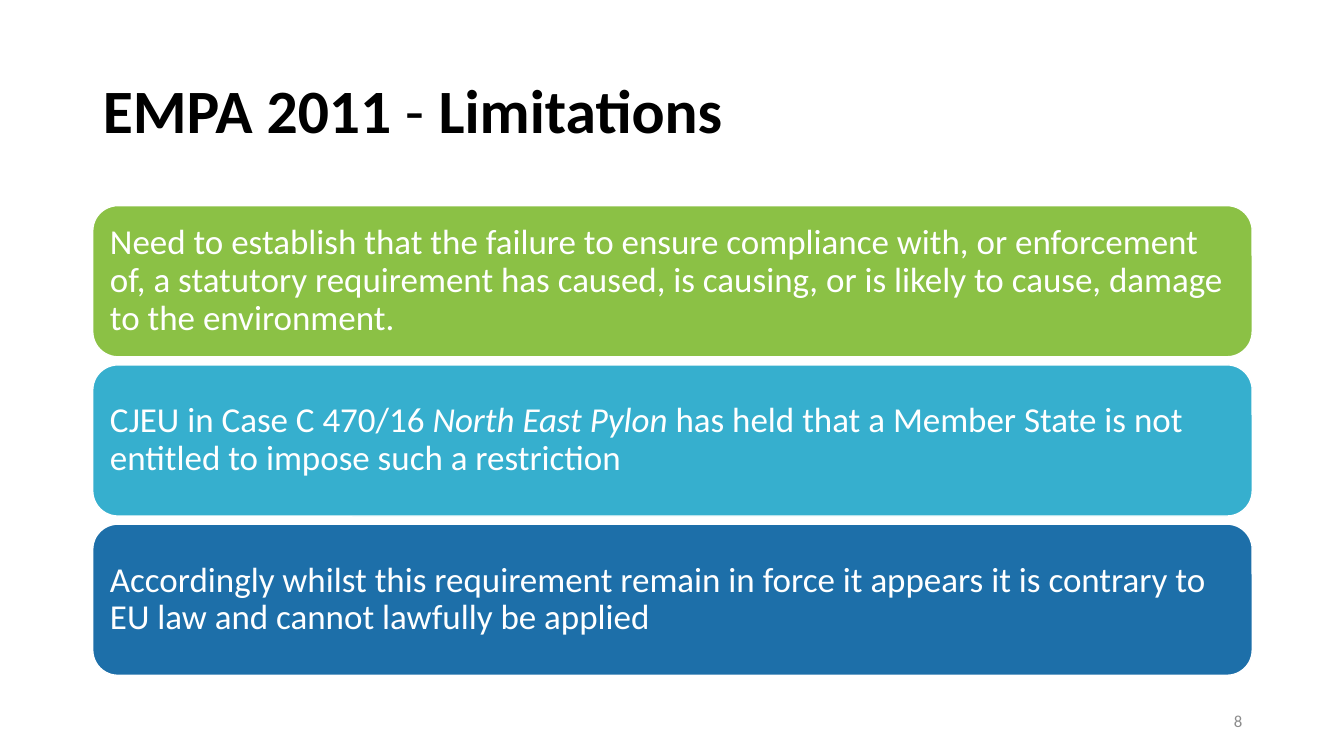
import pptx
import pptx.dml.color
import pptx.enum.shapes
import pptx.enum.text
import pptx.util

Inches = pptx.util.Inches
Align = pptx.enum.text.PP_ALIGN
Anchor = pptx.enum.text.MSO_ANCHOR

LEFT, WIDTH = 0.92, 11.5
CARD_TOP, CARD_HEIGHT, CARD_GAP = 2.04, 1.5, 0.08

TITLE = [("EMPA 2011 ", True, False), ("- ", False, False), ("Limitations", True, False)]
CARDS = [
    ("8BC145", [("Need to establish that the failure to ensure compliance with, or enforcement of, "
                 "a statutory requirement has caused, is causing, or is likely to cause, damage "
                 "to the environment.", False, False)]),
    ("36AFCE", [("CJEU in Case C 470/16 ", False, False),
                ("North East Pylon", False, True),
                (" has held that a Member State is not entitled to impose such a restriction",
                 False, False)]),
    ("1D6FA9", [("Accordingly whilst this requirement remain in force it appears it is contrary to "
                 "EU law and cannot lawfully be applied", False, False)]),
]


def colour(value):
    return pptx.dml.color.RGBColor.from_string(value)


class SlideBuilder:
    font_name = "Calibri"

    def __init__(self, page):
        self.page = page

    def add_text(self, box, spans, size, ink, align=Align.LEFT, spacing=0.9):
        frame = box.text_frame
        frame.word_wrap = True
        frame.auto_size = pptx.enum.text.MSO_AUTO_SIZE.NONE
        frame.vertical_anchor = Anchor.MIDDLE
        para = frame.paragraphs[0]
        para.alignment = align
        para.line_spacing = spacing
        para.font.name = self.font_name
        para.font.size = pptx.util.Pt(size)
        para.font.color.rgb = colour(ink)
        for text, bold, italic in spans:
            span = para.add_run()
            span.text = text
            span.font.bold = bold
            span.font.italic = italic

    def title(self, spans):
        box = self.page.shapes.title
        box.left, box.top = Inches(LEFT), Inches(0.4)
        box.width, box.height = Inches(WIDTH), Inches(1.45)
        self.add_text(box, spans, 44, "000000")

    def card(self, top, fill, spans):
        box = self.page.shapes.add_shape(
            pptx.enum.shapes.MSO_SHAPE.ROUNDED_RECTANGLE,
            Inches(LEFT), Inches(top), Inches(WIDTH), Inches(CARD_HEIGHT))
        box.shadow.inherit = False
        box.fill.solid()
        box.fill.fore_color.rgb = colour(fill)
        box.line.color.rgb = colour("FFFFFF")
        box.line.width = pptx.util.Pt(1)
        frame = box.text_frame
        frame.margin_left = frame.margin_right = Inches(0.1)
        frame.margin_top = frame.margin_bottom = Inches(0.1)
        self.add_text(box, spans, 25, "FFFFFF")

    def page_number(self, number):
        box = self.page.shapes.add_textbox(Inches(9.42), Inches(6.95), Inches(3), Inches(0.4))
        self.add_text(box, [(number, False, False)], 12, "8C8C8C", Align.RIGHT, 1.0)


def main():
    deck = pptx.Presentation()
    deck.slide_width, deck.slide_height = Inches(13.33), Inches(7.5)
    builder = SlideBuilder(deck.slides.add_slide(deck.slide_layouts[5]))
    builder.title(TITLE)
    for index, (fill, spans) in enumerate(CARDS):
        builder.card(CARD_TOP + index * (CARD_HEIGHT + CARD_GAP), fill, spans)
    builder.page_number("8")
    deck.save("out.pptx")


if __name__ == "__main__":
    main()
